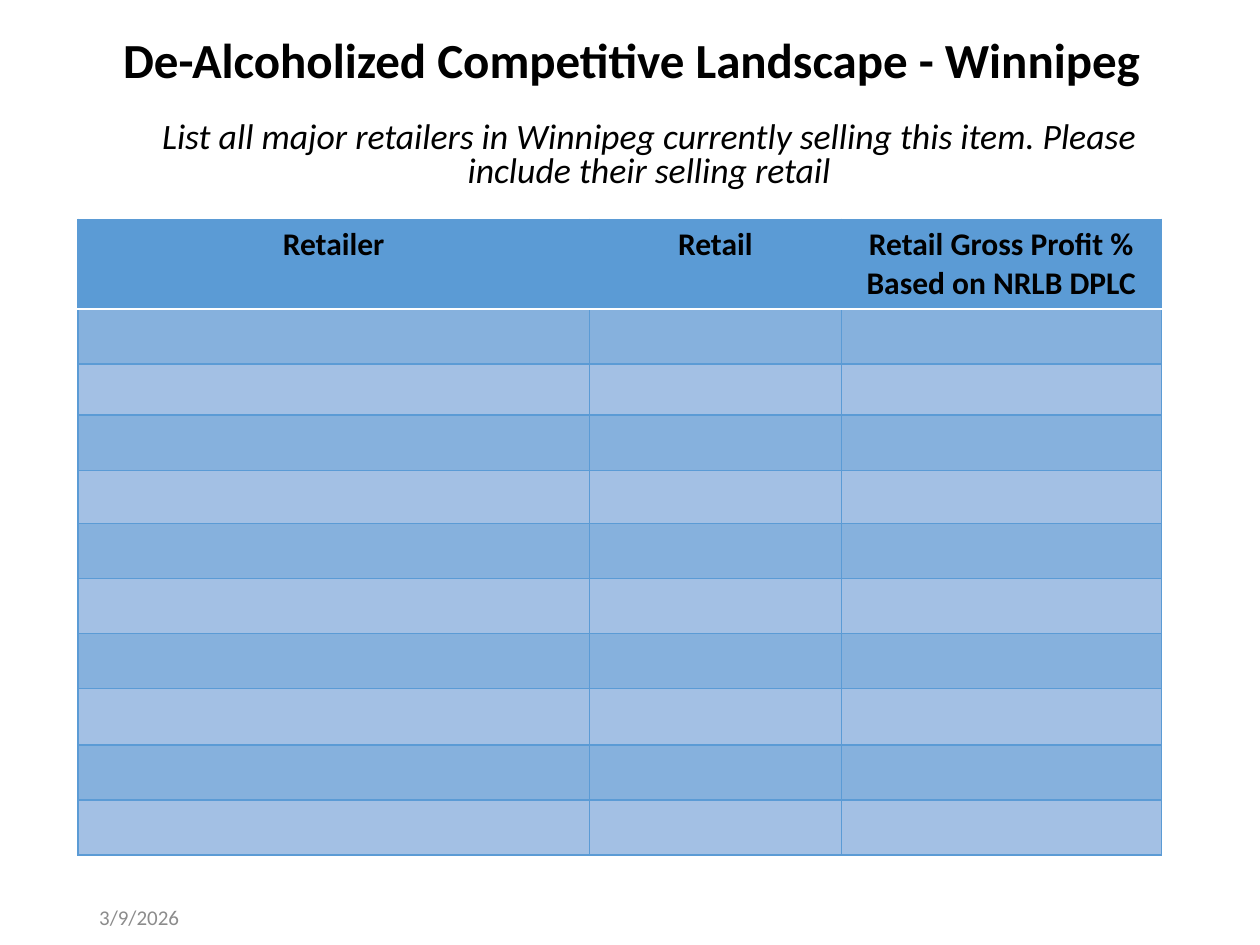
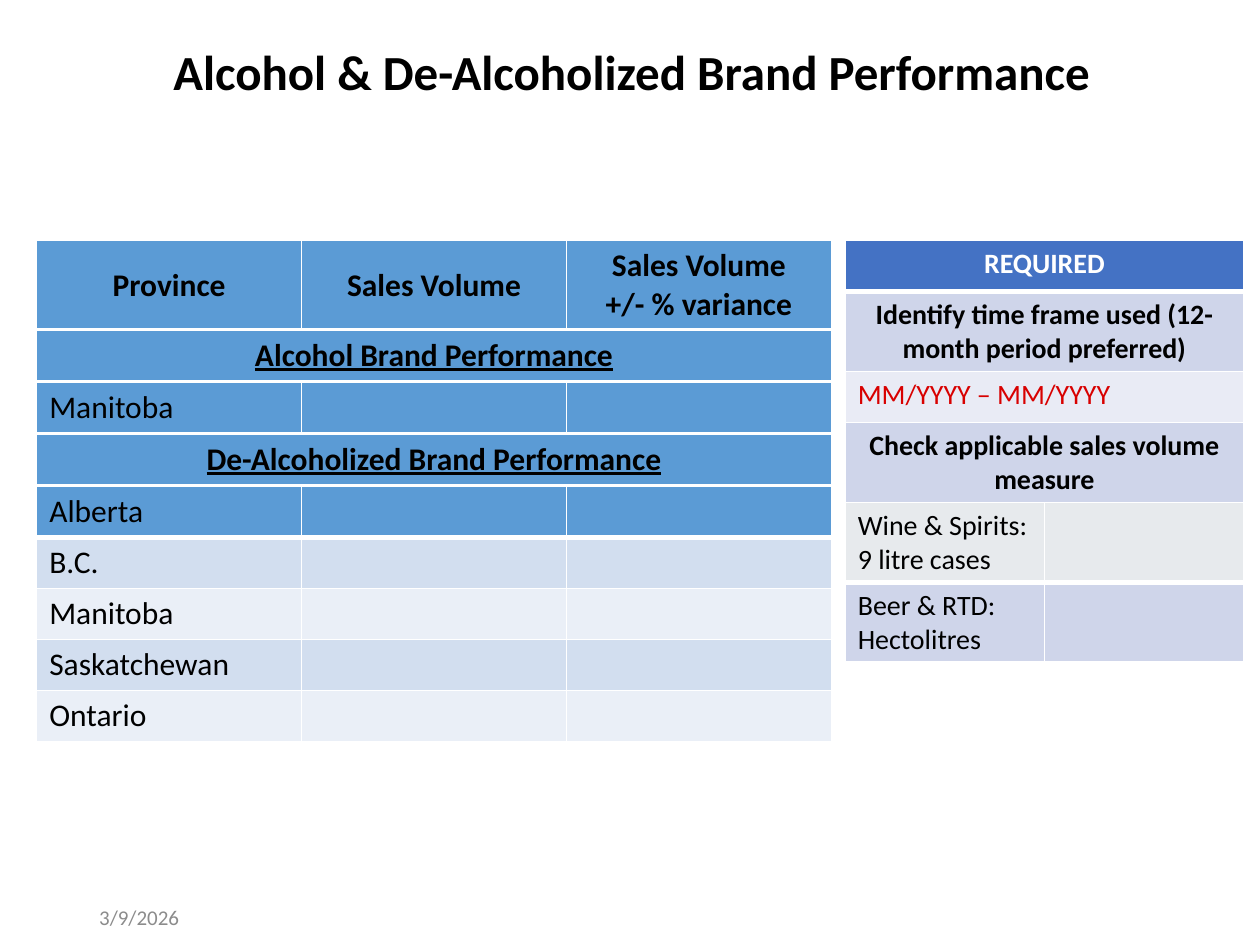
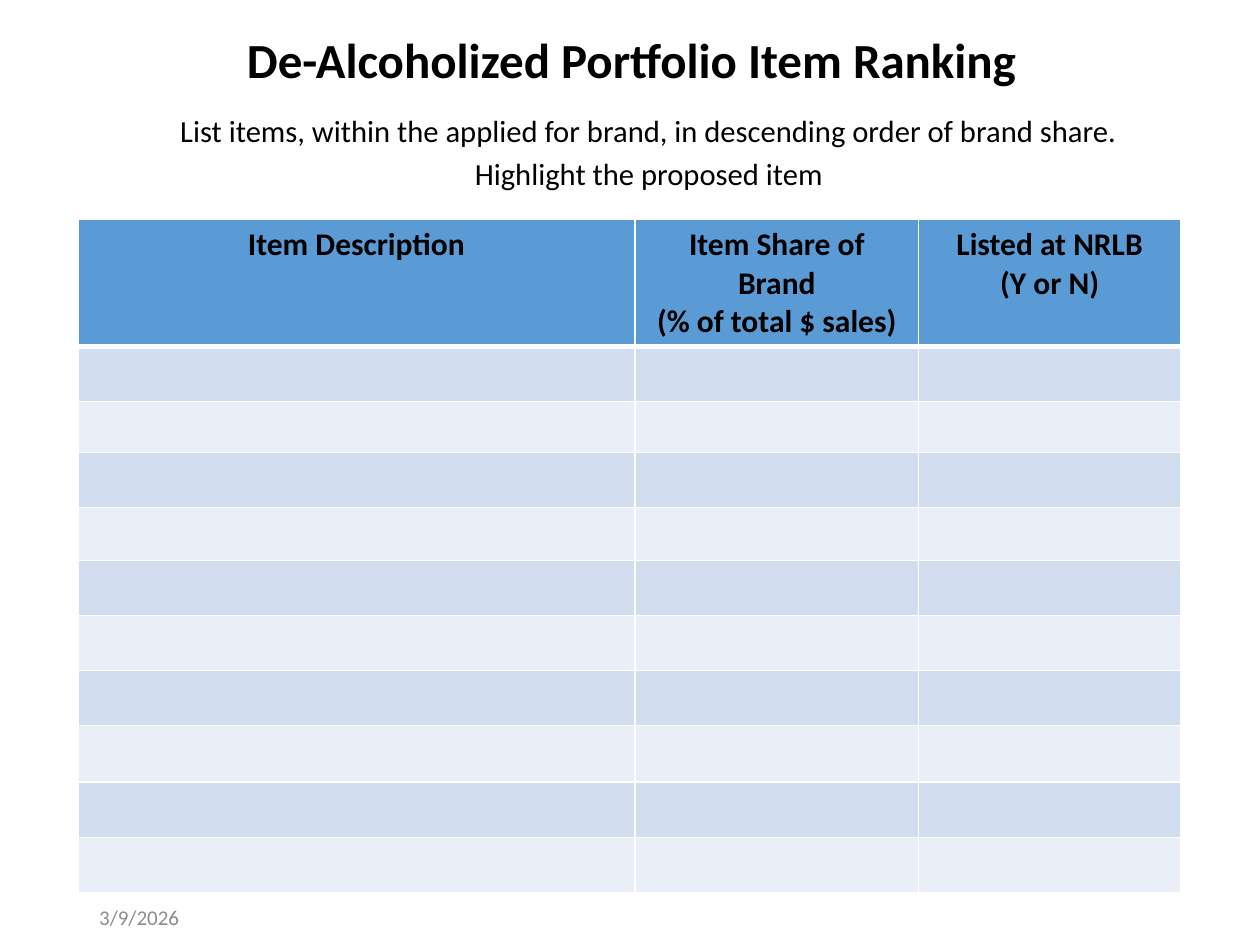
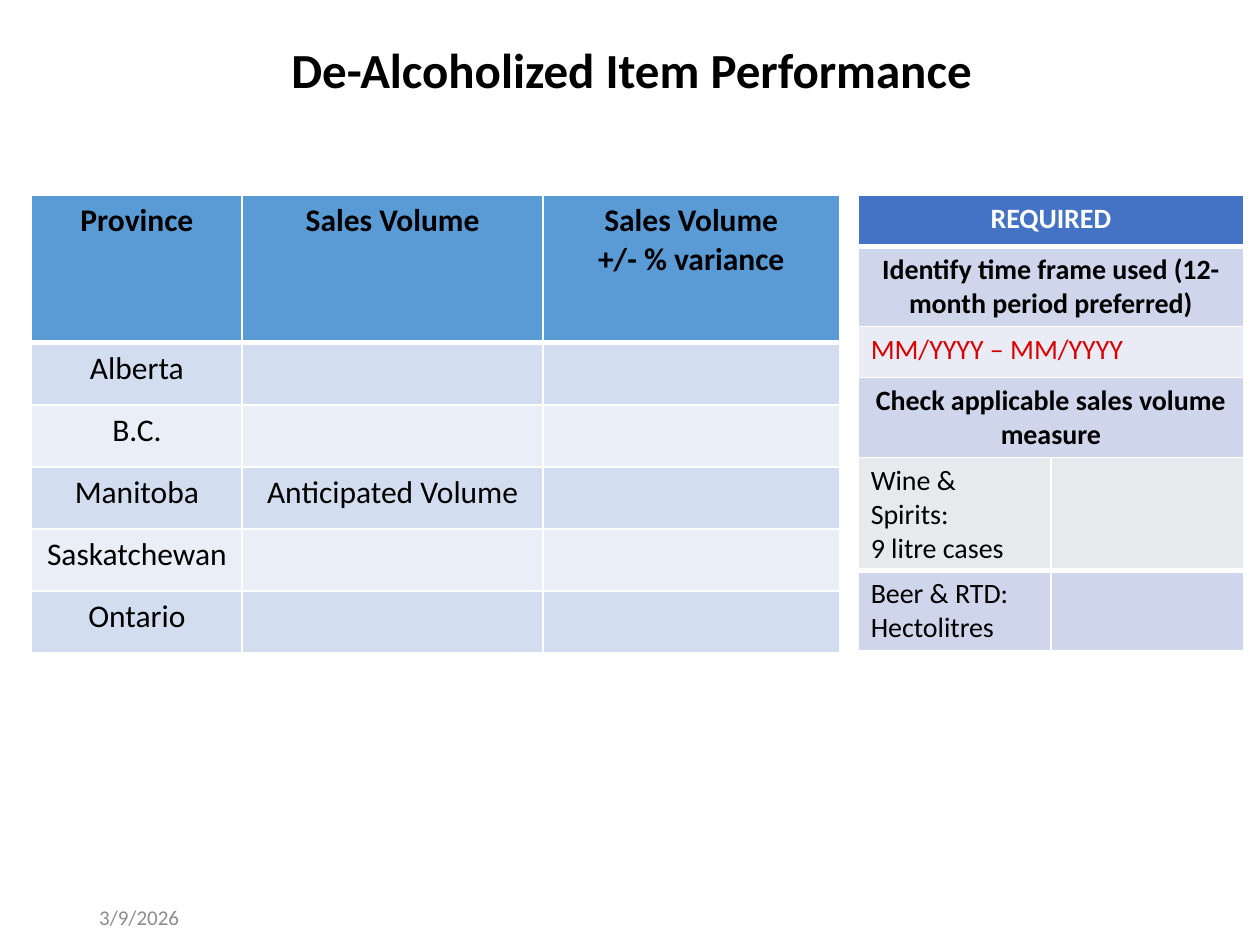
from pptx import Presentation
from pptx.dml.color import RGBColor
from pptx.enum.text import MSO_ANCHOR, PP_ALIGN
from pptx.oxml.ns import qn
from pptx.util import Cm, Pt
from lxml.etree import SubElement

FONT = "Calibri"
BLUE, WHITE, BLACK, GREY, RED = "5B9BD5", "FFFFFF", "000000", "8C8C8C", "D80000"

# Row styles: fill, text format, width of the line below
HEAD = dict(fill=BLUE, fmt=dict(bold=True, align="c"), below=3)
HEAD_MID = dict(HEAD, anchor="m")
STRIP = dict(fill=BLUE, fmt=dict(bold=True, underline=True, align="c"), below=3)
FIRST = dict(fill=BLUE, fmt=dict(), below=3)
BANDS = [dict(fill=c, fmt=dict()) for c in ("D2DEEF", "EAEFF7")]
BANDS_MID = [dict(b, fmt=dict(align="c")) for b in BANDS]
BANDS_DEEP = [dict(fill=c, fmt=dict()) for c in ("86B1DD", "A3C0E4")]
REQUIRED = dict(fill="4472C4", fmt=dict(size=16, color=WHITE, bold=True, align="c"), below=3)
PROMPT = dict(fill="CFD5EA", fmt=dict(size=16, bold=True, align="c"))
PERIOD = dict(fill="E9EBF5", fmt=dict(size=16, color=RED))
WINE = dict(fill="E7EAED", fmt=dict(size=16), below=3)
BEER = dict(fill="CFD5EA", fmt=dict(size=16))

# Content (lengths in cm)
DATE = "3/9/2026"
FORM_HEIGHTS = [1.11, 1.03, 1.11, 1.07, 1.11, 1.11, 1.11, 1.14, 1.11, 1.11]
PROVINCES = ["Alberta", "B.C.", "Manitoba", "Saskatchewan", "Ontario"]

RETAILERS = dict(
    title="De-Alcoholized Competitive Landscape - Winnipeg",
    lead=["List all major retailers in Winnipeg currently selling this item. "
          "Please include their selling retail"],
    lead_fmt=dict(size=20.4, italic=True, spacing=0.8),
    heads=["Retailer", "Retail", "Retail Gross Profit % Based on NRLB DPLC"],
    cols=[10.31, 5.08, 6.45], head_height=1.81,
    head=dict(HEAD, below=1), bands=BANDS_DEEP, line=BLUE)

RANKING = dict(
    title="De-Alcoholized Portfolio Item Ranking",
    lead=["List items, within the applied for brand, in descending order of brand share.",
          "Highlight the proposed item"],
    lead_fmt=dict(size=17.5, spacing=0.7),
    heads=["Item Description", "Item Share of Brand\n(% of total $ sales)",
           "Listed at NRLB\n(Y or N)"],
    cols=[11.23, 5.72, 5.28], head_height=2.56,
    head=HEAD, bands=BANDS, line=WHITE)

VOLUME_HEADS = ["Province", "Sales Volume", "Sales Volume\n+/- % variance"]
REQUIRED_ROWS = [
    (REQUIRED, 1.03, ["REQUIRED"]),
    (PROMPT, 1.61, ["Identify time frame used (12-month period preferred)"]),
    (PERIOD, 1.03, ["MM/YYYY – MM/YYYY"]),
    (PROMPT, 1.61, ["Check applicable sales volume measure"]),
]
MEASURES = ["Wine & Spirits:\n9 litre cases", "Beer & RTD:\nHectolitres"]


def rgb(color):
    return RGBColor.from_string(color)


def write(tf, text, size=18, color=BLACK, bold=False, italic=False, underline=False,
          align="l", spacing=None, before=0):
    for i, line in enumerate(text.split("\n")):
        p = tf.paragraphs[0] if i == 0 else tf.add_paragraph()
        p.alignment = PP_ALIGN.CENTER if align == "c" else PP_ALIGN.LEFT
        if spacing:
            p.line_spacing = spacing
        if i and before:
            p.space_before = Pt(before)
        r = p.add_run()
        r.text = line
        f = r.font
        f.name, f.size, f.color.rgb = FONT, Pt(size), rgb(color)
        f.bold, f.italic, f.underline = bold, italic, underline


def text_box(s, box, text, middle=False, **fmt):
    tf = s.shapes.add_textbox(*map(Cm, box)).text_frame
    tf.word_wrap = True
    tf.vertical_anchor = MSO_ANCHOR.MIDDLE if middle else MSO_ANCHOR.TOP
    write(tf, text, **fmt)


def new_slide(prs, title, top=0.41, height=1.7):
    s = prs.slides.add_slide(prs.slide_layouts[6])
    text_box(s, (1.3, top, 22.86, height), title, middle=True, size=28, bold=True,
             align="c", spacing=0.9)
    text_box(s, (1.75, 18.29, 5.72, 0.38), DATE, middle=True, size=12, color=GREY)
    return s


def borders(cell, **lines):
    """Each line is (colour, width); schema order is left, right, top, bottom, fill."""
    tcPr = cell._tc.get_or_add_tcPr()
    for i, side in enumerate("LRTB"):
        color, width = lines[side]
        ln = SubElement(tcPr, qn("a:ln" + side), w=str(Pt(width)))
        SubElement(SubElement(ln, qn("a:solidFill")), qn("a:srgbClr"), val=color)
        tcPr.insert(i, ln)


def table(s, left, top, cols, rows, line=WHITE):
    """Draw rows of (style, height, texts) and return the bottom edge."""
    total = sum(height for _, height, _ in rows)
    frame = s.shapes.add_table(len(rows), len(cols), Cm(left), Cm(top),
                               Cm(sum(cols)), Cm(total))
    tbl = frame.table
    tbl.first_row = tbl.horz_banding = False
    for col, width in zip(tbl.columns, cols):
        col.width = Cm(width)
    thin = above = (line, 1)
    for row, (style, height, texts) in zip(tbl.rows, rows):
        row.height = Cm(height)
        below = (WHITE, style["below"]) if "below" in style else thin
        for i, cell in enumerate(row.cells):
            cell.fill.solid()
            cell.fill.fore_color.rgb = rgb(style["fill"])
            if style.get("anchor") == "m":
                cell.vertical_anchor = MSO_ANCHOR.MIDDLE
            if i < len(texts) and texts[i]:
                write(cell.text_frame, texts[i], **style["fmt"])
            borders(cell, L=thin, R=thin, T=above, B=below)
        above = below
    return top + total


def banded(bands, heights, texts):
    return [(bands[i % 2], h, t) for i, (h, t) in enumerate(zip(heights, texts))]


def form_slide(prs, form):
    """Title, lead text and a blank form to fill in."""
    s = new_slide(prs, form["title"])
    text_box(s, (2.34, 2.34, 21.49, 1.7), "\n".join(form["lead"]), align="c",
             before=10, **form["lead_fmt"])
    rows = [(form["head"], form["head_height"], form["heads"])]
    rows += banded(form["bands"], FORM_HEIGHTS, [[]] * len(FORM_HEIGHTS))
    table(s, 1.57, 4.42, form["cols"], rows, form["line"])


def required_panel(s, left, top, width, wine_height):
    bottom = table(s, left, top, [width], REQUIRED_ROWS)
    wine, beer = MEASURES
    table(s, left, bottom, [width / 2] * 2,
          [(WINE, wine_height, [wine]), (BEER, 1.61, [beer])])


def brand_slide(prs):
    s = new_slide(prs, "Alcohol & De-Alcoholized Brand Performance", 0.33, 2.34)
    thirds, full = [5.34] * 3, [16.02]
    names = [[name] for name in PROVINCES]
    stack = [
        (thirds, [(HEAD_MID, 1.8, VOLUME_HEADS)]),
        (full, [(STRIP, 1.05, ["Alcohol Brand Performance"])]),
        (thirds, [(FIRST, 1.05, ["Manitoba"])]),
        (full, [(STRIP, 1.05, ["De-Alcoholized Brand Performance"])]),
        (thirds, [(FIRST, 1.03, names[0])] + banded(BANDS, [1.03] * 4, names[1:])),
    ]
    top = 4.85
    for cols, rows in stack:
        top = table(s, 0.74, top, cols, rows)
    required_panel(s, 17.04, 4.85, 8.03, 1.61)


def item_slide(prs):
    s = new_slide(prs, "De-Alcoholized Item Performance", 0.33, 2.26)
    texts = [[name, "Anticipated Volume" if name == "Manitoba" else ""]
             for name in PROVINCES]
    rows = [(HEAD, 2.97, VOLUME_HEADS)] + banded(BANDS_MID, [1.25] * 5, texts)
    table(s, 0.64, 3.94, [4.24, 6.07, 5.97], rows)
    required_panel(s, 17.3, 3.94, 7.77, 2.28)


def main():
    prs = Presentation()
    prs.slide_width, prs.slide_height = Cm(25.4), Cm(19.05)
    form_slide(prs, RETAILERS)
    brand_slide(prs)
    form_slide(prs, RANKING)
    item_slide(prs)
    prs.save("out.pptx")


if __name__ == "__main__":
    main()
